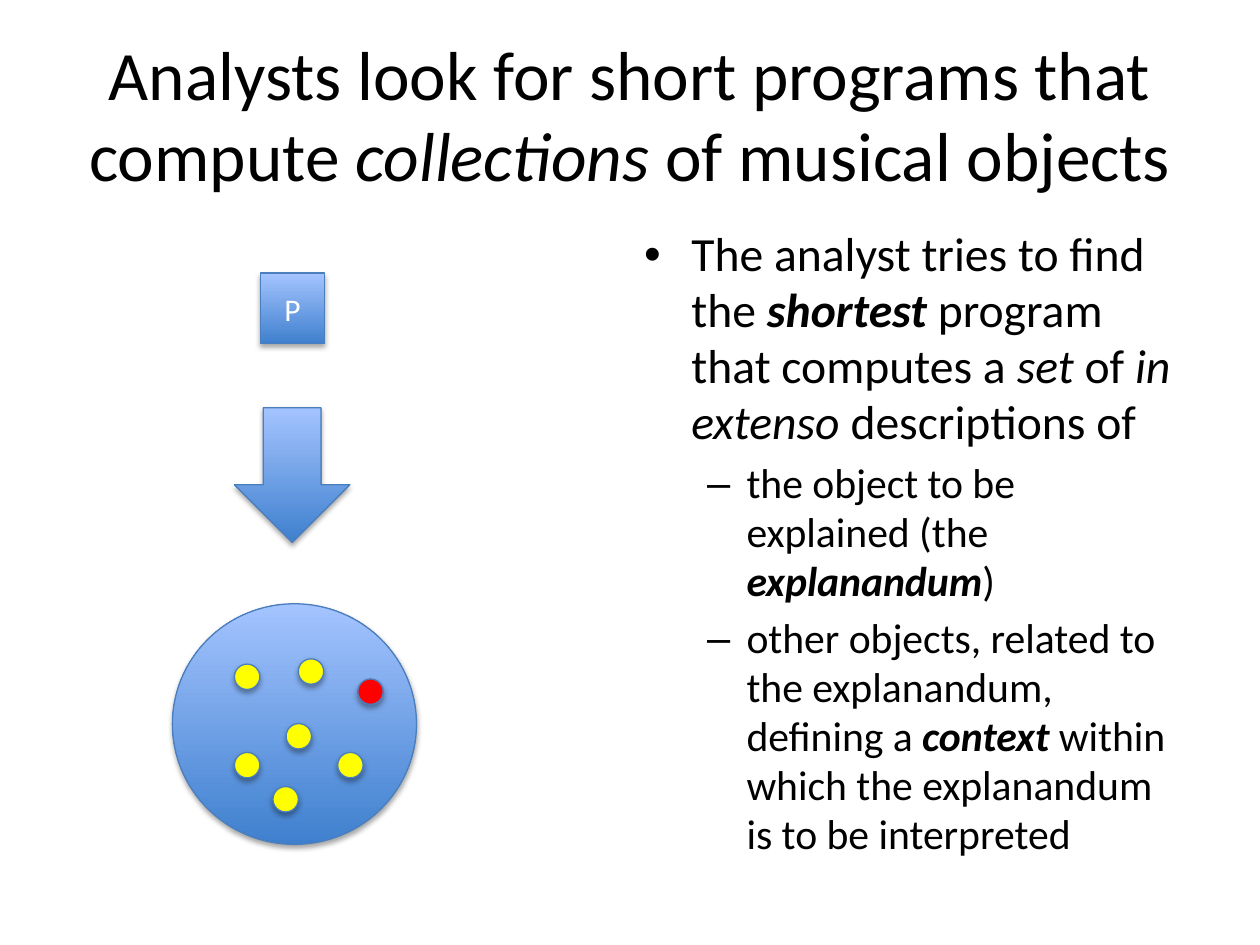
from dataclasses import dataclass
from typing import NamedTuple

import lxml.etree
import pptx
import pptx.dml.color
import pptx.enum.shapes
import pptx.enum.text
import pptx.oxml.ns
import pptx.util

Pt = pptx.util.Pt
RGB = pptx.dml.color.RGBColor
SHAPE = pptx.enum.shapes.MSO_SHAPE
ALIGN = pptx.enum.text.PP_ALIGN
ANCHOR = pptx.enum.text.MSO_ANCHOR
qn = pptx.oxml.ns.qn


@dataclass(frozen=True)
class Theme:
    font: str = "Calibri"
    text: str = "000000"
    label: str = "FFFFFF"
    outline: str = "4B7EBC"
    gradient: tuple[str, str] = ("3F80CE", "A4C4FF")
    context: str = "FFFF00"
    explanandum: str = "FF0000"
    shadow: str = "000000"
    title_size: float = 39.6
    point_size: float = 27.2
    subpoint_size: float = 23.8
    label_size: float = 18
    line_spacing: float = 0.98


THEME = Theme()


class Box(NamedTuple):
    left: float
    top: float
    width: float
    height: float


class Span(NamedTuple):
    text: str
    italic: bool = False
    bold: bool = False


@dataclass(frozen=True)
class Point:
    spans: list[Span]
    size: float
    bullet: str
    margin: float
    hanging: float
    level: int = 0
    space_before: float = 0


class Dot(NamedTuple):
    left: float
    top: float
    color: str = THEME.context


DOT_SIZE = 14.5
TITLE = [
    Span("Analysts look for short programs that compute "),
    Span("collections ", italic=True),
    Span("of musical objects"),
]


def subpoint(spans: list[Span]) -> Point:
    return Point(spans, THEME.subpoint_size, "–", 58.5, 22.5, 1, 4.76)


POINTS = [
    Point(
        [
            Span("The analyst tries to find the "),
            Span("shortest", italic=True, bold=True),
            Span(" program that computes a "),
            Span("set ", italic=True),
            Span("of "),
            Span("in extenso ", italic=True),
            Span("descriptions of"),
        ],
        THEME.point_size, "•", 27, 27,
    ),
    subpoint([
        Span("the object to be explained (the "),
        Span("explanandum", italic=True, bold=True),
        Span(")"),
    ]),
    subpoint([
        Span("other objects, related to the explanandum, defining a "),
        Span("context", italic=True, bold=True),
        Span(" within which the explanandum is to be interpreted"),
    ]),
]
DOTS = [
    Dot(134, 379.5),
    Dot(170.5, 376.5),
    Dot(134, 430),
    Dot(193, 430),
    Dot(156, 449.5),
    Dot(163.5, 413.5),
    Dot(204.5, 388, THEME.explanandum),
]


def write_spans(paragraph, spans: list[Span], size: float, color: str) -> None:
    paragraph.font.name = THEME.font
    paragraph.font.size = Pt(size)
    paragraph.font.color.rgb = RGB.from_string(color)
    for span in spans:
        run = paragraph.add_run()
        run.text = span.text
        if span.italic:
            run.font.italic = True
        if span.bold:
            run.font.bold = True


def add_text_frame(slide, box: Box, anchor):
    frame = slide.shapes.add_textbox(*map(Pt, box)).text_frame
    frame.word_wrap = True
    frame.vertical_anchor = anchor
    return frame


def add_title(slide, box: Box) -> None:
    heading = add_text_frame(slide, box, ANCHOR.MIDDLE).paragraphs[0]
    heading.alignment = ALIGN.CENTER
    heading.line_spacing = THEME.line_spacing
    write_spans(heading, TITLE, THEME.title_size, THEME.text)


def add_points(slide, box: Box) -> None:
    frame = add_text_frame(slide, box, ANCHOR.TOP)
    for index, point in enumerate(POINTS):
        paragraph = frame.add_paragraph() if index else frame.paragraphs[0]
        paragraph.level = point.level
        paragraph.line_spacing = THEME.line_spacing
        paragraph.space_before = Pt(point.space_before)
        properties = paragraph._p.get_or_add_pPr()
        properties.set("marL", str(Pt(point.margin)))
        properties.set("indent", str(-Pt(point.hanging)))
        lxml.etree.SubElement(properties, qn("a:buFont"), typeface="Arial")
        lxml.etree.SubElement(properties, qn("a:buChar"), char=point.bullet)
        write_spans(paragraph, point.spans, point.size, THEME.text)


def add_shadow(shape) -> None:
    shape.shadow.inherit = False
    effects = shape._element.spPr.find(qn("a:effectLst"))
    shadow = lxml.etree.SubElement(
        effects, qn("a:outerShdw"), blurRad=str(Pt(3.1)), dist=str(Pt(1.8)),
        dir="5400000", rotWithShape="0",
    )
    color = lxml.etree.SubElement(shadow, qn("a:srgbClr"), val=THEME.shadow)
    lxml.etree.SubElement(color, qn("a:alpha"), val="35000")


def add_figure(slide, kind, box: Box, color: str | None = None):
    figure = slide.shapes.add_shape(kind, *map(Pt, box))
    if color:
        figure.fill.solid()
        figure.fill.fore_color.rgb = RGB.from_string(color)
    else:
        figure.fill.gradient()
        figure.fill.gradient_angle = 90
        for stop, shade in zip(figure.fill.gradient_stops, THEME.gradient):
            stop.color.rgb = RGB.from_string(shade)
    figure.line.color.rgb = RGB.from_string(THEME.outline)
    figure.line.width = Pt(0.75)
    add_shadow(figure)
    return figure


def main() -> None:
    deck = pptx.Presentation()
    deck.slide_width, deck.slide_height = Pt(720), Pt(540)
    slide = deck.slides.add_slide(deck.slide_layouts[6])

    add_title(slide, Box(36, 21.6, 648, 90))
    add_points(slide, Box(361, 126, 323, 356.4))

    program = add_figure(slide, SHAPE.RECTANGLE, Box(149, 156, 36.5, 40.5))
    program.text_frame.vertical_anchor = ANCHOR.MIDDLE
    label = program.text_frame.paragraphs[0]
    label.alignment = ALIGN.CENTER
    write_spans(label, [Span("P")], THEME.label_size, THEME.label)

    add_figure(slide, SHAPE.DOWN_ARROW, Box(134, 233, 66, 77))
    add_figure(slide, SHAPE.OVAL, Box(98.5, 345, 139.5, 137.5))
    for dot in DOTS:
        add_figure(slide, SHAPE.OVAL, Box(dot.left, dot.top, DOT_SIZE, DOT_SIZE), dot.color)

    deck.save("out.pptx")


if __name__ == "__main__":
    main()
